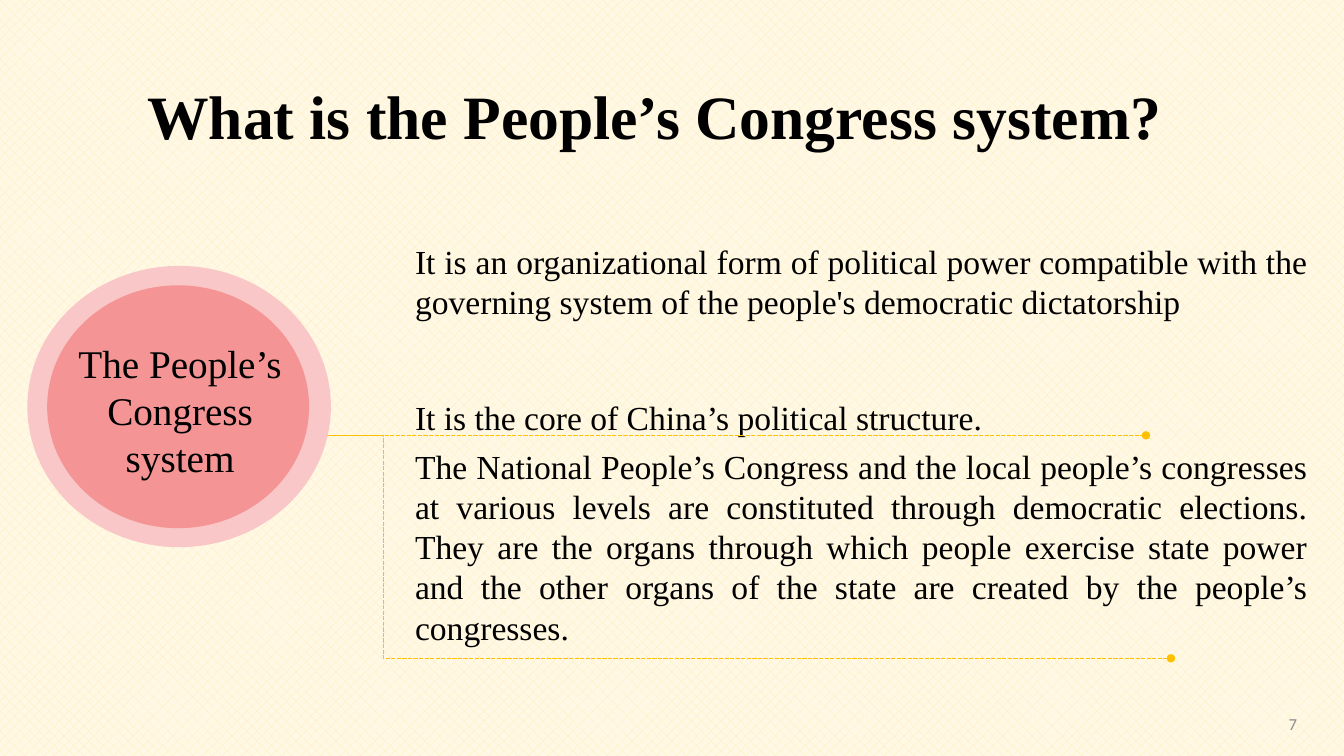
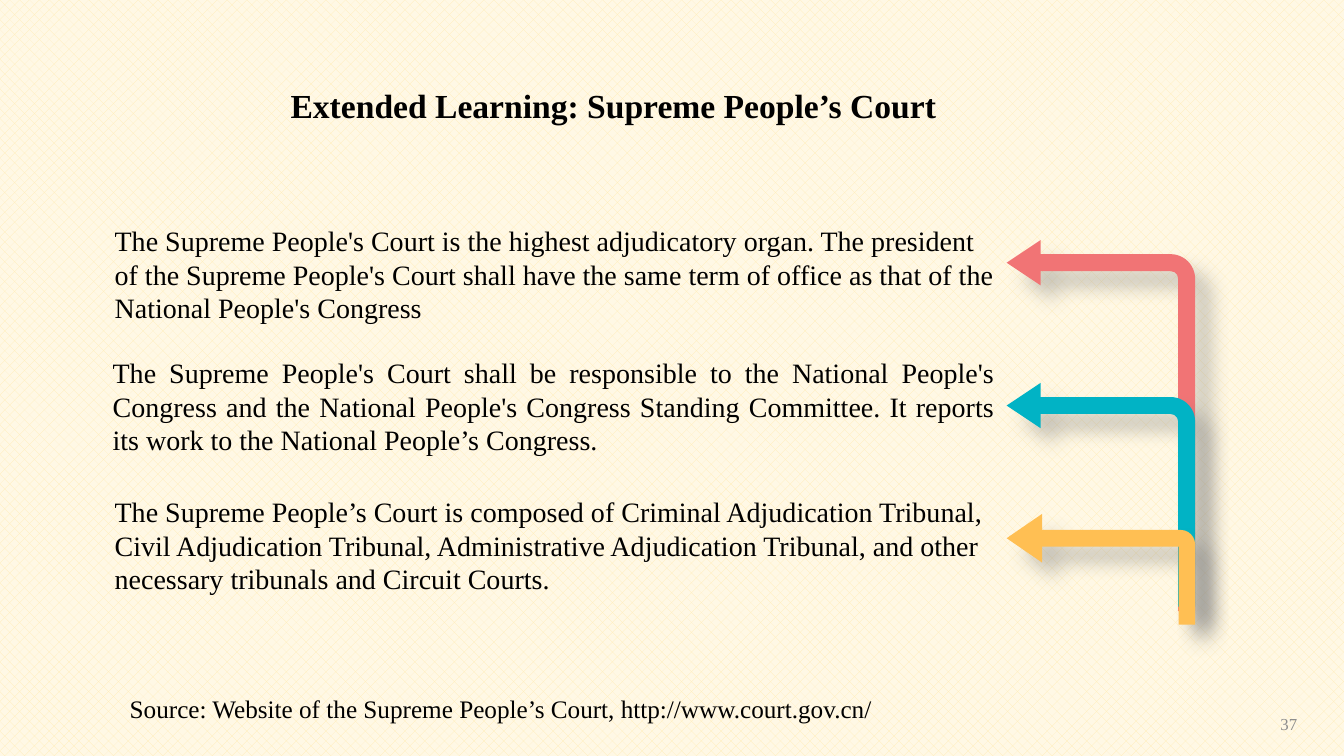
import dataclasses
import typing

import lxml.etree
import pptx
import pptx.dml.color
import pptx.enum.dml
import pptx.enum.shapes
import pptx.enum.text
import pptx.oxml.ns
import pptx.util

Cm = pptx.util.Cm
Pt = pptx.util.Pt
RGBColor = pptx.dml.color.RGBColor
Align = pptx.enum.text.PP_ALIGN
Anchor = pptx.enum.text.MSO_ANCHOR
Shape = pptx.enum.shapes.MSO_SHAPE
qn = pptx.oxml.ns.qn

BLACK = RGBColor(0x00, 0x00, 0x00)
WHITE = RGBColor(0xFF, 0xFF, 0xFF)
GREY = RGBColor(0x8C, 0x8C, 0x8C)
HATCH = RGBColor(0xFF, 0xE6, 0x99)
CREAM = RGBColor(0xFF, 0xF2, 0xCC)
GOLD = RGBColor(0xFF, 0xC0, 0x00)
PINK = RGBColor(0xF9, 0xC7, 0xC7)
CORAL = RGBColor(0xF1, 0x74, 0x75)
TEAL = RGBColor(0x01, 0xB3, 0xC5)
ORANGE = RGBColor(0xFF, 0xBF, 0x53)

SERIF = "Times New Roman"
SANS = "Calibri"
SLIDE_WIDTH, SLIDE_HEIGHT = 33.87, 19.05


class Area(typing.NamedTuple):
    left: float
    top: float
    width: float
    height: float

    def lengths(self) -> list[pptx.util.Length]:
        return [Cm(value) for value in self]


@dataclasses.dataclass(frozen=True)
class Passage:
    text: str
    area: Area
    align: Align = Align.LEFT
    line_spacing: typing.Any = None


@dataclasses.dataclass(frozen=True)
class GuideLine:
    start: tuple[float, float]
    end: tuple[float, float]
    bend: float | None = None


@dataclasses.dataclass(frozen=True)
class BentArrow:
    top: float
    height: float
    color: RGBColor
    proportions: tuple[float, float, float, float]


SYSTEM_PASSAGES = [
    Passage(
        "It is an organizational form of political power compatible with the governing "
        "system of the people's democratic dictatorship",
        Area(10.21, 5.94, 22.99, 2.31), Align.JUSTIFY),
    Passage(
        "It is the core of China’s political structure.",
        Area(10.21, 9.47, 22.99, 1.68), line_spacing=Pt(40)),
    Passage(
        "The National People’s Congress and the local people’s congresses at various levels "
        "are constituted through democratic elections. They are the organs through which "
        "people exercise state power and the other organs of the state are created by the "
        "people’s congresses.",
        Area(10.21, 11.1, 22.99, 5.38), Align.JUSTIFY),
]

GUIDE_LINES = [
    GuideLine((5.82, 10.97), (28.88, 10.97)),
    GuideLine((6.43, 10.97), (29.51, 16.59), bend=0.14),
]

COURT_PASSAGES = [
    Passage(
        "The Supreme People's Court is the highest adjudicatory organ. The president of the "
        "Supreme People's Court shall have the same term of office as that of the National "
        "People's Congress",
        Area(2.64, 5.51, 22.73, 3.12)),
    Passage(
        "The Supreme People's Court shall be responsible to the National People's Congress "
        "and the National People's Congress Standing Committee. It reports its work to the "
        "National People’s Congress.",
        Area(2.59, 8.84, 22.73, 3.28), Align.JUSTIFY),
    Passage(
        "The Supreme People’s Court is composed of Criminal Adjudication Tribunal, Civil "
        "Adjudication Tribunal, Administrative Adjudication Tribunal, and other necessary "
        "tribunals and Circuit Courts.",
        Area(2.64, 12.34, 22.89, 2.82)),
]

LONG_ARROW = (0.09, 0.12, 0.18, 0.13)
SHORT_ARROW = (0.15, 0.22, 0.32, 0.13)
COURT_ARROWS = [
    BentArrow(6.05, 9.35, CORAL, LONG_ARROW),
    BentArrow(9.65, 5.64, TEAL, LONG_ARROW),
    BentArrow(12.95, 2.79, ORANGE, SHORT_ARROW),
]


def add_text(page, text: str, area: Area, *, size: float, font: str = SERIF,
             color: RGBColor = BLACK, bold: bool = False, align: Align = Align.LEFT,
             anchor: Anchor = Anchor.TOP, wrap: bool = True, line_spacing=None) -> None:
    frame = page.shapes.add_textbox(*area.lengths()).text_frame
    frame.word_wrap = wrap
    frame.vertical_anchor = anchor
    para = frame.paragraphs[0]
    para.alignment = align
    para.line_spacing = line_spacing
    span = para.add_run()
    span.text = text
    span.font.name = font
    span.font.size = Pt(size)
    span.font.bold = bold
    span.font.color.rgb = color


def add_filled(page, kind: Shape, area: Area, color: RGBColor, opacity: int = 100):
    shape = page.shapes.add_shape(kind, *area.lengths())
    shape.shadow.inherit = False
    shape.fill.solid()
    shape.fill.fore_color.rgb = color
    shape.line.fill.background()
    if opacity < 100:
        tint = next(shape.element.spPr.iter(qn("a:srgbClr")))
        lxml.etree.SubElement(tint, qn("a:alpha"), val=str(opacity * 1000))
    return shape


def add_guide_line(page, guide: GuideLine) -> None:
    kinds = pptx.enum.shapes.MSO_CONNECTOR
    kind = kinds.STRAIGHT if guide.bend is None else kinds.ELBOW
    ends = [Cm(value) for value in (*guide.start, *guide.end)]
    connector = page.shapes.add_connector(kind, *ends)
    connector.line.color.rgb = GOLD
    connector.line.width = Pt(1)
    connector.line.dash_style = pptx.enum.dml.MSO_LINE.SQUARE_DOT
    outline = connector.get_or_add_ln()
    for tip in ("a:headEnd", "a:tailEnd"):
        lxml.etree.SubElement(outline, qn(tip), type="oval")
    properties = connector.element.spPr
    lxml.etree.SubElement(properties, qn("a:effectLst"))
    if guide.bend is not None:
        adjustments = next(properties.iter(qn("a:avLst")))
        lxml.etree.SubElement(adjustments, qn("a:gd"), name="adj1",
                              fmla=f"val {round(guide.bend * 100000)}")


def add_bent_arrow(page, arrow: BentArrow) -> None:
    area = Area(25.37, arrow.top, 4.75, arrow.height)
    shape = add_filled(page, Shape.BENT_ARROW, area, arrow.color)
    for index, proportion in enumerate(arrow.proportions):
        shape.adjustments[index] = proportion
    properties = shape.element.spPr
    properties.find(qn("a:xfrm")).set("flipH", "1")
    shadow = lxml.etree.SubElement(
        properties.find(qn("a:effectLst")), qn("a:outerShdw"), blurRad=str(Pt(14)),
        dist=str(Pt(16)), dir=str(45 * 60000), algn="tl", rotWithShape="0")
    tint = lxml.etree.SubElement(shadow, qn("a:srgbClr"), val="808080")
    lxml.etree.SubElement(tint, qn("a:alpha"), val="43000")


def add_page(deck, title: str, title_area: Area, title_size: float):
    page = deck.slides.add_slide(deck.slide_layouts[6])
    add_filled(page, Shape.RECTANGLE, Area(0, 0, SLIDE_WIDTH, SLIDE_HEIGHT), CREAM, 50)
    add_text(page, title, title_area, size=title_size, bold=True,
             align=Align.CENTER, wrap=False)
    return page


def add_passages(page, passages: list[Passage], size: float) -> None:
    for passage in passages:
        add_text(page, passage.text, passage.area, size=size, align=passage.align,
                 line_spacing=passage.line_spacing)


def add_page_number(page, number: int, font: str) -> None:
    add_text(page, str(number), Area(25.32, 17.73, 7.62, 1.02), size=12, font=font,
             color=GREY, align=Align.RIGHT, anchor=Anchor.MIDDLE)


def build_system_page(deck) -> None:
    page = add_page(deck, "What is the People’s Congress system?",
                    Area(3.35, 1.85, 26.31, 2.13), 44)
    add_passages(page, SYSTEM_PASSAGES, 24)
    for guide in GUIDE_LINES:
        add_guide_line(page, guide)
    add_filled(page, Shape.OVAL, Area(0.69, 6.7, 7.65, 7.09), PINK)
    add_filled(page, Shape.OVAL, Area(1.19, 7.19, 6.6, 6.12), CORAL, 61)
    add_text(page, "The People’s Congress system", Area(1.57, 8.43, 5.94, 3.84),
             size=28, align=Align.CENTER)
    add_page_number(page, 7, SANS)


def build_court_page(deck) -> None:
    page = add_page(deck, "Extended Learning: Supreme People’s Court",
                    Area(6.99, 2.01, 16.94, 1.27), 24)
    for arrow in COURT_ARROWS:
        add_bent_arrow(page, arrow)
    add_passages(page, COURT_PASSAGES, 20)
    add_text(page, "Source: Website of the Supreme People’s Court, http://www.court.gov.cn/",
             Area(3.02, 16.97, 24.2, 1.42), size=18, line_spacing=1.5)
    add_page_number(page, 37, SERIF)


def main() -> None:
    deck = pptx.Presentation()
    deck.slide_width = Cm(SLIDE_WIDTH)
    deck.slide_height = Cm(SLIDE_HEIGHT)
    backdrop = deck.slide_master.background.fill
    backdrop.patterned()
    backdrop.pattern = pptx.enum.dml.MSO_PATTERN.PERCENT_30
    backdrop.fore_color.rgb = HATCH
    backdrop.back_color.rgb = WHITE
    build_system_page(deck)
    build_court_page(deck)
    deck.save("out.pptx")


if __name__ == "__main__":
    main()
